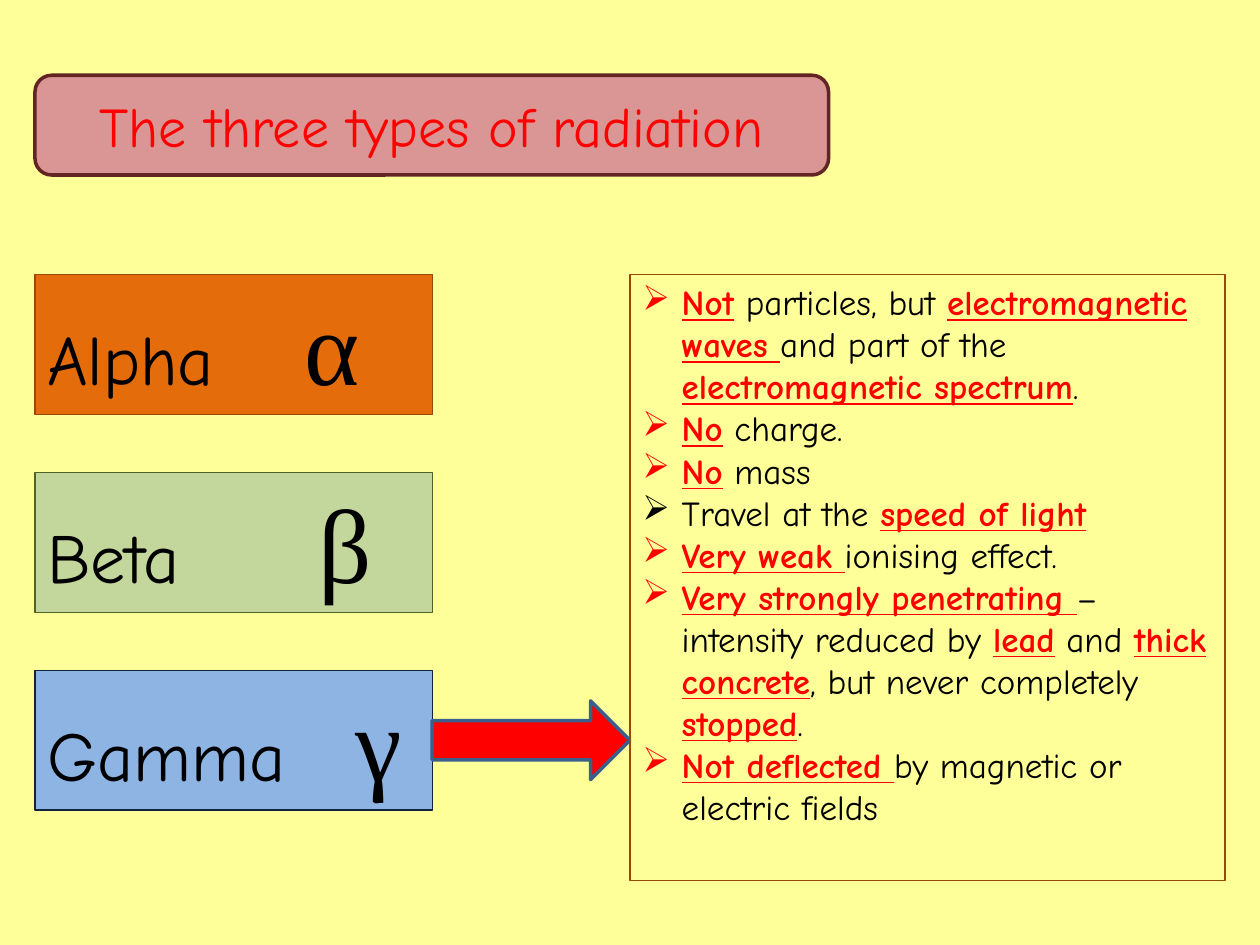
from lxml import etree
from pptx import Presentation
from pptx.dml.color import RGBColor
from pptx.enum.shapes import MSO_SHAPE
from pptx.enum.text import MSO_ANCHOR, PP_ALIGN
from pptx.oxml.ns import qn
from pptx.util import Pt

RECT, ROUNDED = MSO_SHAPE.RECTANGLE, MSO_SHAPE.ROUNDED_RECTANGLE
ARROW = MSO_SHAPE.RIGHT_ARROW
TOP, MIDDLE = MSO_ANCHOR.TOP, MSO_ANCHOR.MIDDLE
LEFT, CENTER = PP_ALIGN.LEFT, PP_ALIGN.CENTER

BODY, GREEK = "Comic Neue", "Times New Roman"
RED, BLACK = "FF0000", "000000"

TITLE = "The three types of radiation"
# name, symbol, fill, line, tab position of the symbol
TYPES = [
    ("Alpha", "α", "E46C0A", "984807", 147),
    ("Beta", "β", "C3D69B", "4F6228", 155),
    ("Gamma", "γ", "8EB4E3", "0F243E", 176),
]
# asterisks enclose the key words
GAMMA_FACTS = [
    "*Not* particles, but *electromagnetic waves *and part of the *electromagnetic spectrum*.",
    "*No* charge.",
    "*No* mass",
    "Travel at the *speed of light*",
    "*Very weak *ionising effect.",
    "*Very strongly penetrating *– intensity reduced by *lead* and *thick concrete*, "
    "but never completely *stopped*.",
    "*Not deflected *by magnetic or electric fields",
]

MARGIN, ROW_TOP = 20, 157
BOX_W, BOX_H, PITCH = 227, 80, 113
PANEL_X, PANEL_W, PANEL_H = 360, 340, 346
ARROW_H = 45
INDENT = 22.5


def rgb(color):
    return RGBColor.from_string(color)


def add_box(kind, x, y, w, h, fill=None, line=BLACK, weight=0.75, anchor=TOP):
    sp = s.shapes.add_shape(kind, Pt(x), Pt(y), Pt(w), Pt(h))
    sp.shadow.inherit = False
    if fill:
        sp.fill.solid()
        sp.fill.fore_color.rgb = rgb(fill)
    else:
        sp.fill.background()
    sp.line.color.rgb = rgb(line)
    sp.line.width = Pt(weight)
    sp.text_frame.word_wrap = True
    sp.text_frame.vertical_anchor = anchor
    return sp


def add_run(p, text, size=20, font=BODY, color=BLACK, key=False):
    """Add a run; key words are bold and underlined."""
    r = p.add_run()
    r.text = text
    r.font.size = Pt(size)
    r.font.name = font
    r.font.color.rgb = rgb(color)
    r.font.bold = r.font.underline = key


def add_tab(p, position):
    tabs = etree.SubElement(p._p.get_or_add_pPr(), qn("a:tabLst"))
    etree.SubElement(tabs, qn("a:tab"), pos=str(Pt(position)), algn="l")


def add_bullet(p):
    pPr = p._p.get_or_add_pPr()
    pPr.set("marL", str(Pt(INDENT)))
    pPr.set("indent", str(-Pt(INDENT)))
    etree.SubElement(pPr, qn("a:buChar"), char="➢")


prs = Presentation()
prs.slide_width, prs.slide_height = Pt(720), Pt(540)
s = prs.slides.add_slide(prs.slide_layouts[6])
s.background.fill.solid()
s.background.fill.fore_color.rgb = rgb("FFFF99")

title = add_box(ROUNDED, MARGIN, 43, 453.5, 57, "D99694", "632523", 2, MIDDLE)
p = title.text_frame.paragraphs[0]
p.alignment = CENTER
add_run(p, TITLE, size=32, color=RED)

for i, (name, symbol, fill, line, tab) in enumerate(TYPES):
    box = add_box(RECT, MARGIN, ROW_TOP + i * PITCH, BOX_W, BOX_H, fill, line)
    p = box.text_frame.paragraphs[0]
    p.alignment = LEFT
    add_tab(p, tab)
    add_run(p, name + "\t", size=40)
    add_run(p, symbol, size=60, font=GREEK)

arrow_x = MARGIN + BOX_W
gamma_middle = ROW_TOP + (len(TYPES) - 1) * PITCH + BOX_H / 2
add_box(ARROW, arrow_x, gamma_middle - ARROW_H / 2, PANEL_X - arrow_x, ARROW_H,
        RED, "3A5F8C", 2)

panel = add_box(RECT, PANEL_X, ROW_TOP, PANEL_W, PANEL_H, line="984807")
tf = panel.text_frame
for i, fact in enumerate(GAMMA_FACTS):
    p = tf.add_paragraph() if i else tf.paragraphs[0]
    p.alignment = LEFT
    add_bullet(p)
    for j, part in enumerate(fact.split("*")):
        key = j % 2 == 1
        if part:
            add_run(p, part, color=RED if key else BLACK, key=key)

prs.save("out.pptx")
